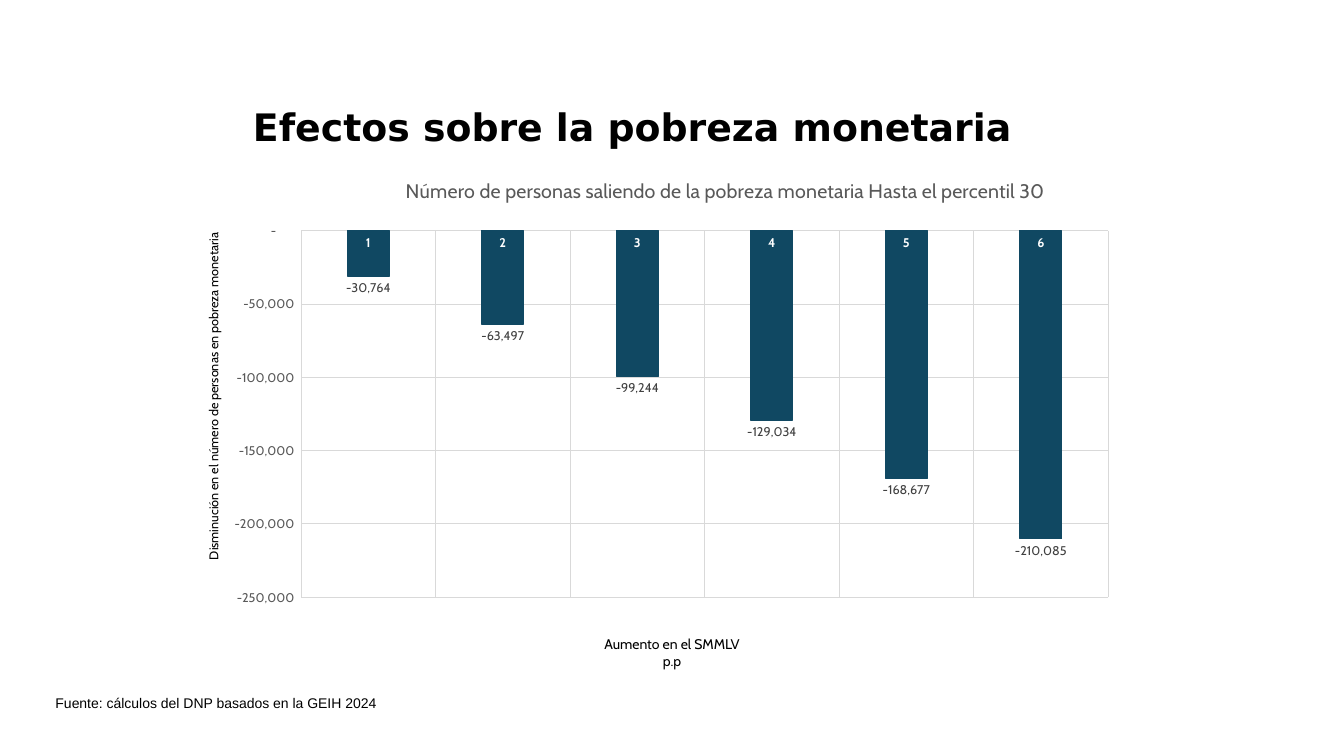
from lxml import etree
from pptx import Presentation
from pptx.chart.data import CategoryChartData
from pptx.dml.color import RGBColor
from pptx.enum.chart import XL_CHART_TYPE, XL_LABEL_POSITION, XL_TICK_MARK
from pptx.enum.text import MSO_ANCHOR, PP_ALIGN
from pptx.oxml.ns import qn
from pptx.util import Inches, Pt

BLACK = RGBColor(0x00, 0x00, 0x00)
WHITE = RGBColor(0xFF, 0xFF, 0xFF)
GRAY = RGBColor(0x59, 0x59, 0x59)
DARK = RGBColor(0x40, 0x40, 0x40)
GRID = RGBColor(0xD9, 0xD9, 0xD9)
TEAL = RGBColor(0x10, 0x48, 0x62)
COLUMN = XL_CHART_TYPE.COLUMN_CLUSTERED
OUTSIDE = XL_LABEL_POSITION.OUTSIDE_END
NO_TICK = XL_TICK_MARK.NONE
MIDDLE = MSO_ANCHOR.MIDDLE
CENTER, LEFT = PP_ALIGN.CENTER, PP_ALIGN.LEFT


def set_font(font, size, color, name="Cabin", bold=False):
    for key, value in dict(size=Pt(size), name=name, bold=bold).items():
        setattr(font, key, value)
    font.color.rgb = color


def place(parent, index, **values):
    """Give a chart part a manual layout, in fractions of the chart."""
    for old in parent.findall(qn("c:layout")):
        parent.remove(old)
    layout = etree.Element(qn("c:layout"))
    manual = etree.SubElement(layout, qn("c:manualLayout"))
    for tag, value in values.items():
        etree.SubElement(manual, qn("c:" + tag)).set("val", str(value))
    parent.insert(index, layout)


prs = Presentation()
prs.slide_width, prs.slide_height = Inches(13.33), Inches(7.5)
s = prs.slides.add_slide(prs.slide_layouts[1])

# Title, source note and category caption
title, note = s.placeholders
caption = s.shapes.add_textbox(0, 0, 0, 0)
texts = [
    (title, (0.52, 0.98, 11.5, 0.55), ["Efectos sobre la pobreza monetaria"],
     CENTER, 27, "DejaVu Sans", True),
    (note, (0.45, 6.8, 11.64, 0.35),
     ["Fuente: cálculos del DNP basados en la GEIH 2024"],
     LEFT, 10, "Arial", False),
    (caption, (5.75, 6.25, 1.83, 0.44), ["Aumento en el SMMLV", "p.p"],
     CENTER, 10, "Cabin", False),
]
for sp, box, lines, align, size, name, bold in texts:
    sp.left, sp.top, sp.width, sp.height = [Inches(v) for v in box]
    tf = sp.text_frame
    tf.word_wrap = True
    tf.vertical_anchor = MIDDLE
    tf.text = "\n".join(lines)
    for p in tf.paragraphs:
        pPr = p._p.get_or_add_pPr()
        pPr.set("marL", "0")
        pPr.set("indent", "0")
        etree.SubElement(pPr, qn("a:buNone"))
        p.alignment = align
        p.space_before = Pt(0)
        set_font(p.runs[0].font, size, BLACK, name, bold)

# Chart
data = CategoryChartData()
data.categories = ["1", "2", "3", "4", "5", "6"]
data.add_series("Series 1",
                [-30764, -63497, -99244, -129034, -168677, -210085])
chart = s.shapes.add_chart(COLUMN, Inches(1.72), Inches(1.39), Inches(9.45),
                           Inches(4.72), data).chart
set_font(chart.font, 10, BLACK)
chart.has_legend = False
place(chart._chartSpace.chart.plotArea, 0, layoutTarget="inner", xMode="edge",
      yMode="edge", x=0.134, y=0.191, w=0.847, h=0.77)

# Axes
cat_axis, val_axis = chart.category_axis, chart.value_axis
for axis, color, bold in [(cat_axis, WHITE, True), (val_axis, GRAY, False)]:
    set_font(axis.tick_labels.font, 9, color, bold=bold)
    axis.major_tick_mark = axis.minor_tick_mark = NO_TICK
    axis.has_major_gridlines = True
    for line in (axis.major_gridlines.format.line, axis.format.line):
        line.color.rgb = GRID
        line.width = Pt(0.75)
val_axis.format.line.fill.background()
val_axis.minimum_scale, val_axis.maximum_scale = -250000, 0
val_axis.major_unit = 50000
val_axis.tick_labels.number_format = (
    '_-* #,##0_-;\\-* #,##0_-;_-* "-"??_-;_-@_')
val_axis.tick_labels.number_format_is_linked = False

# Chart and axis titles
headings = [
    (chart.chart_title,
     "Número de personas saliendo de la pobreza monetaria Hasta el percentil 30",
     14, GRAY, 0.24, 0.07),
    (val_axis.axis_title,
     "Disminución en el número de personas en pobreza monetaria",
     9, BLACK, 0.03, 0.19),
]
for heading, text, size, color, x, y in headings:
    tf = heading.text_frame
    tf.text = text
    set_font(tf.paragraphs[0].runs[0].font, size, color)
    place(heading._element, 1, xMode="edge", yMode="edge", x=x, y=y)
val_axis.axis_title.text_frame._txBody.bodyPr.set("rot", "-5400000")

# Columns and value labels
plot = chart.plots[0]
plot.gap_width, plot.overlap = 219, -27
plot.vary_by_categories = False
series = plot.series[0]
series.invert_if_negative = False
series.format.fill.solid()
series.format.fill.fore_color.rgb = TEAL
series.format.line.color.rgb = TEAL
series.format.line.width = Pt(0.75)
labels = series.data_labels
labels.show_value = True
labels.position = OUTSIDE
labels.number_format = "#,##0"
labels.number_format_is_linked = False
set_font(labels.font, 9, DARK)

prs.save("out.pptx")
